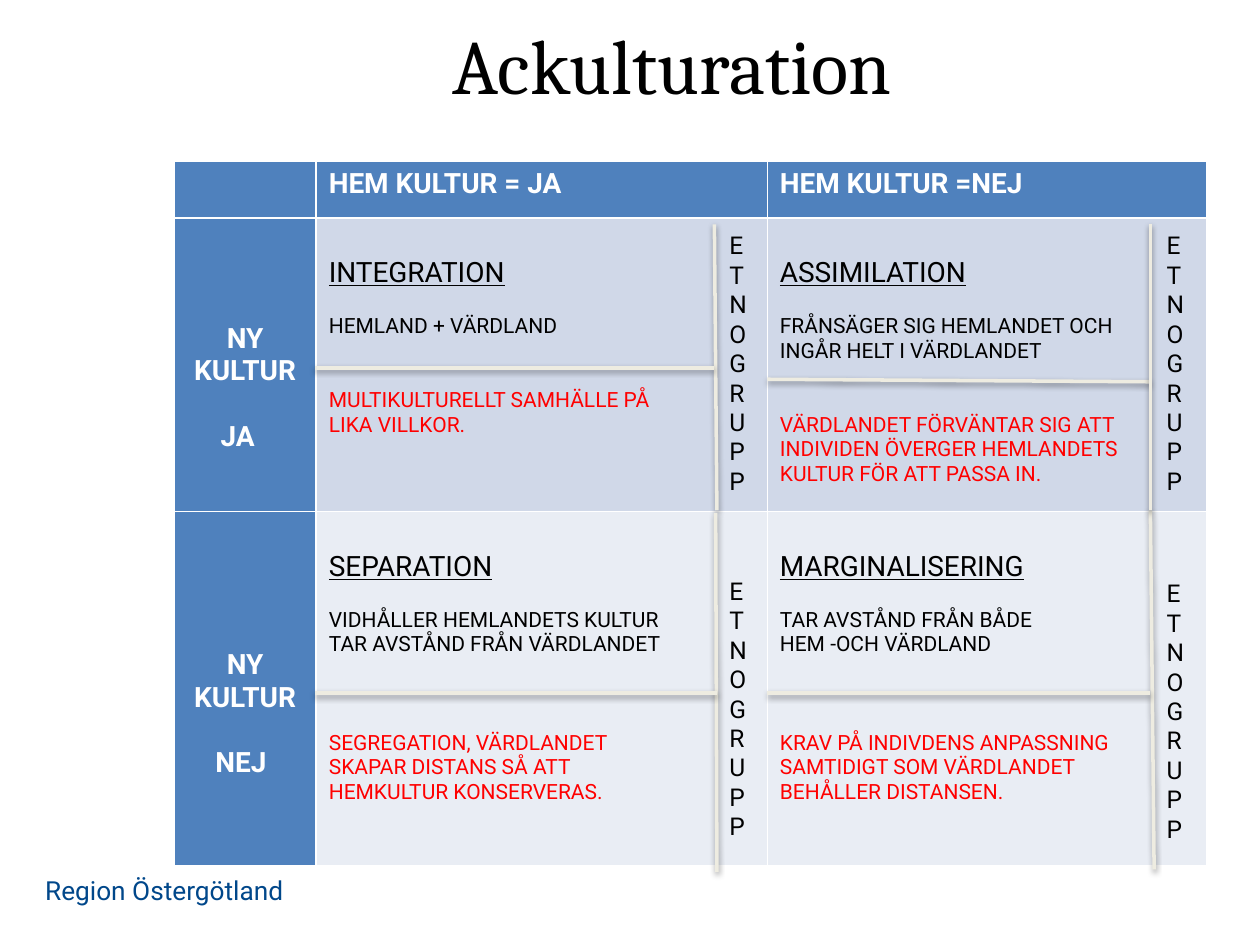
"""Build the Ackulturation slide: a culture matrix with divided cells."""
from dataclasses import dataclass

from lxml.etree import SubElement
from pptx import Presentation
from pptx.dml.color import RGBColor
from pptx.enum.shapes import MSO_CONNECTOR
from pptx.enum.text import MSO_ANCHOR, PP_ALIGN
from pptx.oxml.ns import qn
from pptx.util import Inches, Pt


@dataclass(frozen=True)
class Theme:
    head: str = "Cambria"
    body: str = "Roboto"
    black: str = "000000"
    white: str = "FFFFFF"
    red: str = "FF0000"
    blue: str = "4F81BD"
    footer: str = "00478A"
    divider: str = "EEECE1"
    bands: tuple = ("D0D8E8", "E9EDF4")
    title_pt: int = 44
    heading_pt: int = 16
    footer_pt: int = 15
    letter_pt: int = 14
    text_pt: int = 12
    heading_gap: float = 18.75
    text_gap: float = 14.06


T = Theme()


def write(tf, text, size=T.text_pt, color=T.black, font=T.body, bold=False,
          underline=False, align=PP_ALIGN.LEFT, before=0, indent=0):
    for i, line in enumerate(text.split("\n")):
        p = tf.paragraphs[0] if not tf.text else tf.add_paragraph()
        p.alignment = align
        if before and i == 0:
            p.space_before = Pt(before)
        if indent:
            p._p.get_or_add_pPr().set("marL", str(Inches(indent)))
        r = p.add_run()
        r.text = line
        r.font.name, r.font.size = font, Pt(size)
        r.font.bold, r.font.underline = bold, underline
        r.font.color.rgb = RGBColor.from_string(color)


def add_box(x, y, w, h, top=0.05):
    tf = s.shapes.add_textbox(Inches(x), Inches(y), Inches(w), Inches(h)).text_frame
    tf.word_wrap = True
    tf.margin_top = Inches(top)
    return tf


prs = Presentation()
prs.slide_width, prs.slide_height = Inches(10), Inches(7.5)
s = prs.slides.add_slide(prs.slide_layouts[5])

title = s.shapes.title
title.left, title.top = Inches(1.17), Inches(0)
title.width, title.height = Inches(8.33), Inches(1.01)
title.text_frame.vertical_anchor = MSO_ANCHOR.MIDDLE
write(title.text_frame, "Ackulturation", size=T.title_pt, font=T.head, align=PP_ALIGN.CENTER)

write(add_box(0.26, 6.89, 3.68, 0.35), "Region Östergötland", size=T.footer_pt, color=T.footer)

table = s.shapes.add_table(3, 3, Inches(1.38), Inches(1.28), Inches(8.2), Inches(5.59)).table
table.first_col = True
for col, width in zip(table.columns, (1.13, 3.58, 3.49)):
    col.width = Inches(width)
for row, height in zip(table.rows, (0.45, 2.33, 2.81)):
    row.height = Inches(height)
for r in range(3):
    for c in range(3):
        fill = table.cell(r, c).fill
        fill.solid()
        fill.fore_color.rgb = RGBColor.from_string(T.blue if r == 0 or c == 0 else T.bands[r - 1])

for c, text in enumerate(("HEM KULTUR = JA", "HEM KULTUR =NEJ"), 1):
    write(table.cell(0, c).text_frame, text, size=T.heading_pt, color=T.white, bold=True)

for r, answer, top, indent in ((1, "JA", 0.83, 0.27), (2, "NEJ", 1.09, 0.23)):
    cell = table.cell(r, 0)
    cell.margin_top = Inches(top)
    label = dict(size=T.heading_pt, color=T.white, bold=True)
    write(cell.text_frame, "NY KULTUR", align=PP_ALIGN.CENTER, **label)
    write(cell.text_frame, answer, before=T.heading_gap, indent=indent, **label)

strategies = (
    (1, 1, "INTEGRATION", "HEMLAND + VÄRDLAND",
     "MULTIKULTURELLT SAMHÄLLE PÅ\nLIKA VILLKOR."),
    (1, 2, "ASSIMILATION", "FRÅNSÄGER SIG HEMLANDET OCH\nINGÅR HELT I VÄRDLANDET",
     "VÄRDLANDET FÖRVÄNTAR SIG ATT INDIVIDEN ÖVERGER HEMLANDETS KULTUR FÖR ATT PASSA IN."),
    (2, 1, "SEPARATION", "VIDHÅLLER HEMLANDETS KULTUR\nTAR AVSTÅND FRÅN VÄRDLANDET",
     "SEGREGATION, VÄRDLANDET\nSKAPAR DISTANS SÅ ATT\nHEMKULTUR KONSERVERAS."),
    (2, 2, "MARGINALISERING", "TAR AVSTÅND FRÅN BÅDE\nHEM -OCH VÄRDLAND",
     "KRAV PÅ INDIVDENS ANPASSNING SAMTIDIGT SOM VÄRDLANDET\nBEHÅLLER DISTANSEN."),
)
for r, c, name, individual, society in strategies:
    cell = table.cell(r, c)
    cell.margin_top = Inches(0.31)
    write(cell.text_frame, name, size=T.heading_pt, underline=True)
    write(cell.text_frame, individual, before=T.text_gap)
    write(cell.text_frame, society, color=T.red, before=(r + 1) * T.text_gap)

dividers = (
    (5.67, 1.78, 5.69, 4.05), (2.5, 2.92, 5.67, 2.92),
    (5.68, 4.07, 5.69, 6.92), (2.5, 5.5, 5.69, 5.5),
    (9.13, 4.05, 9.16, 6.9), (6.09, 5.5, 9.13, 5.5),
    (6.09, 3.01, 9.13, 3.03), (9.13, 1.78, 9.13, 4.05),
)
for ends in dividers:
    line = s.shapes.add_connector(MSO_CONNECTOR.STRAIGHT, *(Inches(v) for v in ends))
    line.line.width = Pt(2)
    line.line.color.rgb = RGBColor.from_string(T.divider)
    effects = SubElement(line._element.spPr, qn("a:effectLst"))
    shadow = SubElement(effects, qn("a:outerShdw"), blurRad="40000", dist="20000",
                        dir="5400000", rotWithShape="0")
    shade = SubElement(shadow, qn("a:srgbClr"), val=T.black)
    SubElement(shade, qn("a:alpha"), val="38000")

for x, y, w, h, top in ((5.69, 1.78, 0.4, 2.29, 0.05), (5.69, 4.05, 0.4, 2.69, 0.52),
                        (9.16, 4.07, 0.42, 2.69, 0.52), (9.16, 1.78, 0.42, 2.22, 0.05)):
    write(add_box(x, y, w, h, top), "\n".join("ETNOGRUPP"), size=T.letter_pt)

prs.save("out.pptx")
